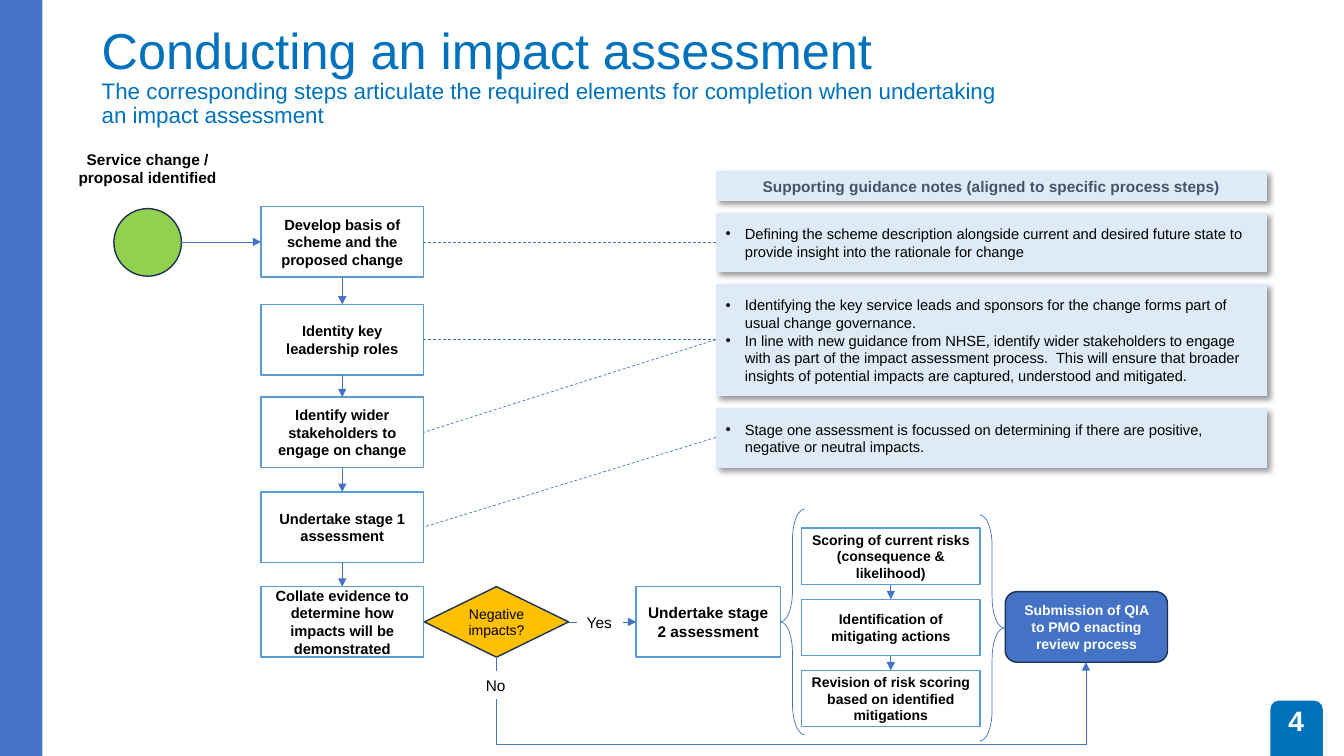
import pptx
import pptx.dml.color
import pptx.enum.dml
import pptx.enum.shapes
import pptx.enum.text
import pptx.oxml
import pptx.oxml.ns
import pptx.util
from lxml import etree

INCH = pptx.util.Inches
KIND = pptx.enum.shapes.MSO_SHAPE
ALIGN = pptx.enum.text.PP_ALIGN
ANCHOR = pptx.enum.text.MSO_ANCHOR
NAMESPACE = pptx.oxml.ns.nsdecls("a")
BLUE, BADGE, OUTLINE, NAVY = "4472C4", "0072BC", "5B9BD5", "1E3256"
WHITE, BLACK, PALE = "FFFFFF", "000000", "DEEBF7"

deck = pptx.Presentation()
deck.slide_width, deck.slide_height = INCH(13.33), INCH(7.5)
page = deck.slides.add_slide(deck.slide_layouts[6])


def add_box(kind, left, top, width, height, text="", size=10.5, color=BLACK,
            fill=None, outline=None, weight=1, bold=False, align=ALIGN.CENTER):
    """Add a preset shape, or a text box when kind is None, with one text style."""
    place = [INCH(value) for value in (left, top, width, height)]
    if kind is None:
        box = page.shapes.add_textbox(*place)
    else:
        box = page.shapes.add_shape(kind, *place)
        box.shadow.inherit = False
        if fill:
            box.fill.solid()
            box.fill.fore_color.rgb = pptx.dml.color.RGBColor.from_string(fill)
        else:
            box.fill.background()
        if outline:
            box.line.color.rgb = pptx.dml.color.RGBColor.from_string(outline)
            box.line.width = pptx.util.Pt(weight)
        else:
            box.line.fill.background()
    if text:
        frame = box.text_frame
        frame.text = text
        frame.word_wrap = True
        frame.vertical_anchor = ANCHOR.MIDDLE
        for para in frame.paragraphs:
            para.alignment = align
            for span in para.runs:
                span.font.name = "Arial"
                span.font.size = pptx.util.Pt(size)
                span.font.bold = bold
                span.font.color.rgb = pptx.dml.color.RGBColor.from_string(color)
    return box


def add_line(x1, y1, x2, y2, arrow=True, dashed=False, elbow=False):
    style = pptx.enum.shapes.MSO_CONNECTOR
    line = page.shapes.add_connector(style.ELBOW if elbow else style.STRAIGHT,
                                     INCH(x1), INCH(y1), INCH(x2), INCH(y2))
    line.line.color.rgb = pptx.dml.color.RGBColor.from_string(BLUE)
    line.line.width = pptx.util.Pt(0.5)
    if dashed:
        line.line.dash_style = pptx.enum.dml.MSO_LINE.DASH
    properties = line._element.spPr
    if arrow:
        outline = properties.find(pptx.oxml.ns.qn("a:ln"))
        etree.SubElement(outline, pptx.oxml.ns.qn("a:tailEnd"), type="triangle")
    etree.SubElement(properties, pptx.oxml.ns.qn("a:effectLst"))
    return line


# Page frame and title
add_box(KIND.ROUNDED_RECTANGLE, 12.6, 6.95, 0.52, 0.75, fill=BADGE)
add_box(KIND.RECTANGLE, -0.07, -0.08, 0.49, 7.84, fill=BLUE)
add_box(None, 12.59, 6.95, 0.53, 0.4, "4", 20, WHITE, bold=True)
title = add_box(
    None, 0.91, 0.04, 9.28, 1.45,
    "Conducting an impact assessment\vThe corresponding steps articulate the required "
    "elements for completion when undertaking an impact assessment",
    16, BADGE, align=ALIGN.LEFT)
heading = title.text_frame.paragraphs[0]
heading.line_spacing = 0.9
heading.runs[0].font.size = pptx.util.Pt(36)

# Column of process steps
STEP_LEFT, STEP_WIDTH, STEP_HEIGHT = 2.59, 1.61, 0.7
STEP_RIGHT = STEP_LEFT + STEP_WIDTH
STEP_CENTRE = STEP_LEFT + STEP_WIDTH / 2
steps = [
    (2.05, "Develop basis of scheme and the proposed change"),
    (3.02, "Identity key leadership roles"),
    (3.94, "Identify wider stakeholders to engage on change"),
    (4.88, "Undertake stage 1 assessment"),
    (5.82, "Collate evidence to determine how impacts will be demonstrated"),
]
for top, text in steps:
    add_box(KIND.FLOWCHART_PROCESS, STEP_LEFT, top, STEP_WIDTH, STEP_HEIGHT, text,
            fill=WHITE, outline=OUTLINE, bold=True)
for (top, _), (next_top, _) in zip(steps, steps[1:]):
    add_line(STEP_CENTRE, top + STEP_HEIGHT, STEP_CENTRE, next_top)

# Start of the process
add_box(KIND.FLOWCHART_PROCESS, 0.6, 1.34, 1.73, 0.66,
        "Service change / proposal identified", 11, fill=WHITE, bold=True)
add_box(KIND.FLOWCHART_CONNECTOR, 1.13, 2.07, 0.67, 0.67, fill="92D050", outline=NAVY)
add_line(1.8, 2.4, STEP_LEFT, 2.4)

# Decision row
ROW_TOP, ROW_MIDDLE = 5.82, 6.17
decision = add_box(KIND.FLOWCHART_DECISION, 4.21, ROW_TOP, 1.43, STEP_HEIGHT,
                   "Negative impacts?", 10, fill="FFC000", outline=NAVY)
frame = decision.text_frame
frame.margin_left = frame.margin_right = frame.margin_top = frame.margin_bottom = 0
add_box(KIND.FLOWCHART_PROCESS, 6.31, ROW_TOP, 1.43, STEP_HEIGHT,
        "Undertake stage 2 assessment", 11, fill=WHITE, outline=OUTLINE, bold=True)
for left, top, width, answer in [(5.72, 6.03, 0.47, "Yes"), (4.72, 6.66, 0.4, "No")]:
    label = add_box(None, left, top, width, 0.29, answer, 11, align=ALIGN.LEFT)
    label.text_frame.word_wrap = False
    label.text_frame.vertical_anchor = ANCHOR.TOP
add_line(5.64, ROW_MIDDLE, 5.72, ROW_MIDDLE, arrow=False)
add_line(6.18, ROW_MIDDLE, 6.31, ROW_MIDDLE)
add_line(4.92, ROW_TOP + STEP_HEIGHT, 4.92, 6.66, arrow=False)

# Risk steps between braces
RISK_LEFT, RISK_TOP, RISK_WIDTH, RISK_HEIGHT, RISK_PITCH = 7.95, 5.24, 1.77, 0.56, 0.705
RISK_CENTRE = RISK_LEFT + RISK_WIDTH / 2
risks = ["Scoring of current risks (consequence & likelihood)",
         "Identification of mitigating actions",
         "Revision of risk scoring based on identified mitigations"]
for index, text in enumerate(risks):
    top = RISK_TOP + index * RISK_PITCH
    add_box(KIND.FLOWCHART_PROCESS, RISK_LEFT, top, RISK_WIDTH, RISK_HEIGHT, text, 10,
            fill=WHITE, outline=OUTLINE, bold=True)
    if index:
        add_line(RISK_CENTRE, top - RISK_PITCH + RISK_HEIGHT, RISK_CENTRE, top)
for left, top, turn in [(7.74, 5.05, 0), (9.72, 5.11, 180)]:
    brace = add_box(KIND.LEFT_BRACE, left, top, 0.24, 2.24, outline=BLUE, weight=0.5)
    brace.adjustments[0] = 1.27
    brace.rotation = turn

# Submission, with the "No" route running below the row
add_box(KIND.FLOWCHART_ALTERNATE_PROCESS, 9.97, 5.87, STEP_WIDTH, STEP_HEIGHT,
        "Submission of QIA to PMO enacting review process", 10, WHITE, BLUE, NAVY, bold=True)
route = add_line(8.03, 9.68, 7.66, 3.83, elbow=True)
route_properties = route._element.spPr
route_properties.find(pptx.oxml.ns.qn("a:xfrm")).set("rot", "5400000")
geometry = route_properties.find(pptx.oxml.ns.qn("a:prstGeom"))
for old in list(geometry):
    geometry.remove(old)
geometry.append(pptx.oxml.parse_xml(
    f'<a:avLst {NAMESPACE}><a:gd name="adj1" fmla="val -120600"/></a:avLst>'))

# Guidance notes
NOTE_LEFT, NOTE_WIDTH, NOTE_GAP = 7.1, 5.47, 0.12
notes = [
    (0.29, "Supporting guidance notes (aligned to specific process steps)"),
    (0.59, "Defining the scheme description alongside current and desired future state to "
           "provide insight into the rationale for change"),
    (1.11, "Identifying the key service leads and sponsors for the change forms part of "
           "usual change governance.\nIn line with new guidance from NHSE, identify wider "
           "stakeholders to engage with as part of the impact assessment process.  This will "
           "ensure that broader insights of potential impacts are captured, understood and "
           "mitigated."),
    (0.59, "Stage one assessment is focussed on determining if there are positive, negative "
           "or neutral impacts."),
]
top = 1.7
for index, (height, text) in enumerate(notes):
    header = index == 0
    note = add_box(KIND.FLOWCHART_PROCESS, NOTE_LEFT, top, NOTE_WIDTH, height, text,
                   11 if header else 10.5, "44546A" if header else BLACK, PALE,
                   bold=header, align=ALIGN.CENTER if header else ALIGN.LEFT)
    effects = note._element.spPr.find(pptx.oxml.ns.qn("a:effectLst"))
    effects.append(pptx.oxml.parse_xml(
        f'<a:outerShdw {NAMESPACE} blurRad="50800" dist="38100" dir="2700000" algn="tl" '
        'rotWithShape="0"><a:srgbClr val="000000"><a:alpha val="40000"/></a:srgbClr>'
        '</a:outerShdw>'))
    if not header:
        for para in note.text_frame.paragraphs:
            bullet = para._p.get_or_add_pPr()
            bullet.set("marL", str(INCH(0.19)))
            bullet.set("indent", str(-INCH(0.19)))
            etree.SubElement(bullet, pptx.oxml.ns.qn("a:buFont"), typeface="Arial")
            etree.SubElement(bullet, pptx.oxml.ns.qn("a:buChar"), char="•")
    top += height + NOTE_GAP

# Dashed links from notes to steps
for note_middle, step in [(2.4, 0), (3.37, 1), (3.37, 2), (4.34, 3)]:
    add_line(NOTE_LEFT, note_middle, STEP_RIGHT, steps[step][0] + STEP_HEIGHT / 2,
             arrow=False, dashed=True)

deck.save("out.pptx")
